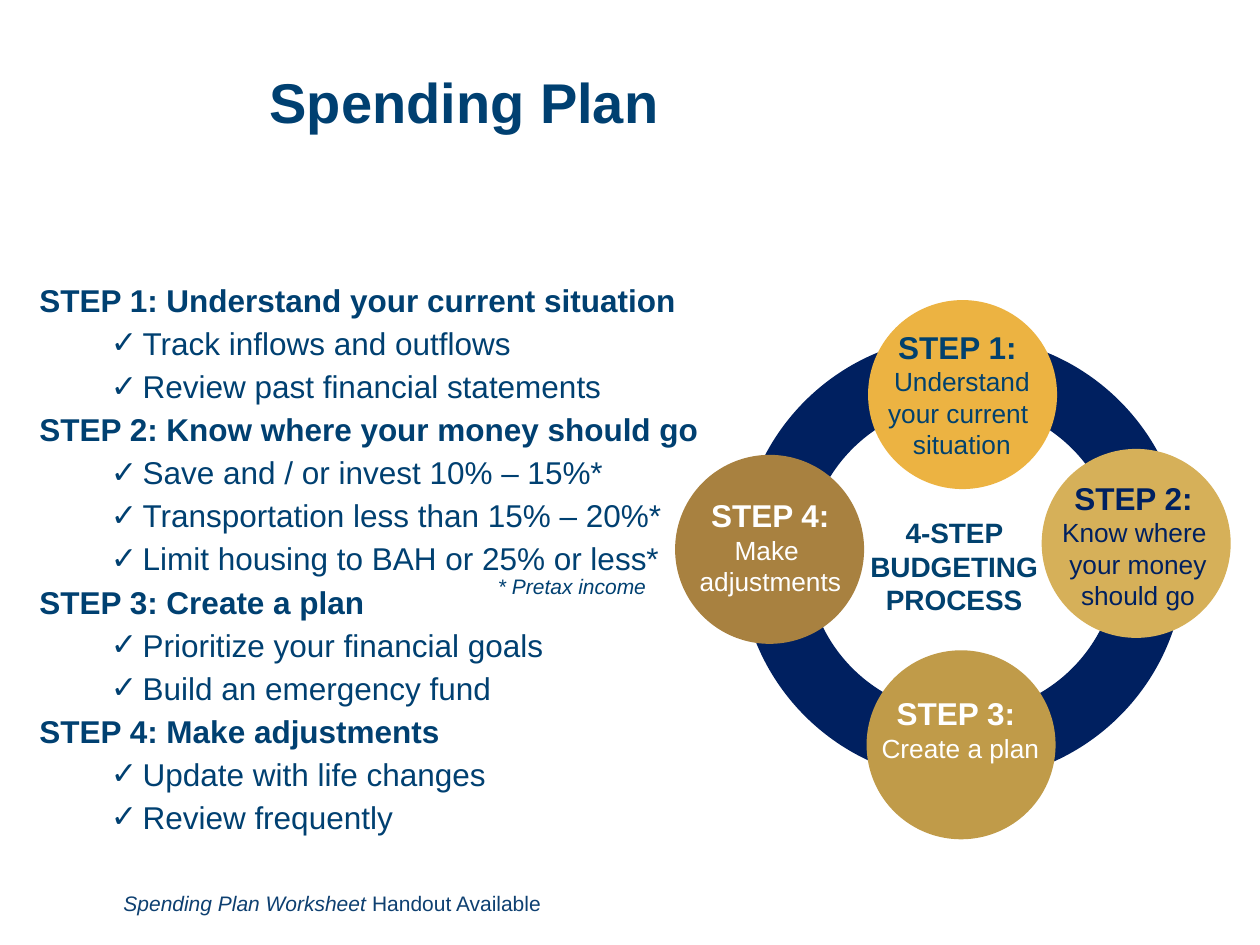
from lxml import etree
from pptx import Presentation
from pptx.dml.color import RGBColor
from pptx.enum.shapes import MSO_SHAPE
from pptx.enum.text import MSO_ANCHOR, MSO_AUTO_SIZE, PP_ALIGN
from pptx.oxml.ns import qn
from pptx.util import Cm, Pt

OVAL = MSO_SHAPE.OVAL
TOP, MIDDLE = MSO_ANCHOR.TOP, MSO_ANCHOR.MIDDLE
LEFT, CENTER = PP_ALIGN.LEFT, PP_ALIGN.CENTER
FIXED = MSO_AUTO_SIZE.NONE

BLUE = RGBColor(0x00, 0x40, 0x71)
STEEL = RGBColor(0x01, 0x41, 0x6E)
SLATE = RGBColor(0x0E, 0x40, 0x71)
NAVY = RGBColor(0x00, 0x20, 0x60)
WHITE = RGBColor(0xFF, 0xFF, 0xFF)
AMBER = RGBColor(0xEC, 0xB3, 0x42)
SAND = RGBColor(0xD6, 0xB0, 0x59)
GOLD = RGBColor(0xC0, 0x9B, 0x49)
BRONZE = RGBColor(0xA8, 0x81, 0x40)

PLAN = [
    ("STEP 1: Understand your current situation",
     ["Track inflows and outflows", "Review past financial statements"]),
    ("STEP 2: Know where your money should go",
     ["Save and / or invest 10% – 15%*",
      "Transportation less than 15% – 20%*",
      "Limit housing to BAH or 25% or less*"]),
    ("STEP 3: Create a plan",
     ["Prioritize your financial goals", "Build an emergency fund"]),
    ("STEP 4: Make adjustments",
     ["Update with life changes", "Review frequently"]),
]

# Disc place in the wheel, fill, text colour, text place in the disc, lines
DISC = 3.81
STEPS = [
    (3.89, 0, AMBER, STEEL, 0.05, 0.43,
     ["STEP 1: ", "Understand your current ", "situation"]),
    (7.39, 3, SAND, NAVY, 0.1, 0.48,
     ["STEP 2: ", "Know where ", "your money", "should go"]),
    (3.86, 7.06, GOLD, WHITE, 0.05, 0.76,
     ["STEP 3: ", "Create a plan"]),
    (0, 3.12, BRONZE, WHITE, 0.08, 0.71,
     ["STEP 4:", "Make ", "adjustments"]),
]


def place(shape, box):
    shape.left, shape.top, shape.width, shape.height = map(Cm, box)


def add_run(para, text, size, color, bold=False, italic=False):
    run = para.add_run()
    run.text = text
    font = run.font
    font.name, font.size = "Arial", Pt(size)
    font.bold, font.italic = bold, italic
    font.color.rgb = color


def next_para(frame, first):
    return frame.paragraphs[0] if first else frame.add_paragraph()


def add_text(shapes, box):
    """Add a wrapping text box and return its text frame."""
    frame = shapes.add_textbox(*map(Cm, box)).text_frame
    frame.word_wrap = True
    return frame


def set_bullet(para, mark, margin, indent):
    props = para._p.get_or_add_pPr()
    props.set("marL", str(Cm(margin)))
    props.set("indent", str(Cm(indent)))
    if mark:
        etree.SubElement(props, qn("a:buChar")).set("char", mark)
    else:
        etree.SubElement(props, qn("a:buNone"))


def fill_title(title, box):
    place(title, box)
    frame = title.text_frame
    frame.auto_size = FIXED
    frame.vertical_anchor = MIDDLE
    para = frame.paragraphs[0]
    para.alignment = LEFT
    para.line_spacing = 0.9
    add_run(para, "Spending Plan", 32, BLUE, bold=True)


def fill_plan(body, box):
    place(body, box)
    frame = body.text_frame
    frame.auto_size = FIXED
    frame.vertical_anchor = TOP
    rows = []
    for head, items in PLAN:
        rows.append((head, True))
        rows += [(item, False) for item in items]
    for i, (text, head) in enumerate(rows):
        para = next_para(frame, i == 0)
        if head:
            set_bullet(para, None, 0.03, 0)
        else:
            para.level = 1
            set_bullet(para, "✓", 2.11, -0.64)
        para.space_before = Pt(2 if i else 0)
        para.space_after = Pt(1)
        add_run(para, text, 18, BLUE, bold=head)


def add_notes(shapes, left, top):
    """Add the footnote of the list and the handout line below it."""
    para = add_text(shapes, (left + 7.98, top + 5.89, 5.49, 0.89)).paragraphs[0]
    set_bullet(para, None, 1.3, 0)
    add_run(para, "* Pretax income", 12, BLUE, italic=True)
    para = add_text(shapes, (left + 1.73, top + 12.29, 8.92, 0.76)).paragraphs[0]
    add_run(para, "Spending Plan Worksheet", 12, SLATE, italic=True)
    add_run(para, " Handout Available", 12, SLATE)


def add_disc(shapes, x, y, size):
    disc = shapes.add_shape(OVAL, Cm(x), Cm(y), Cm(size), Cm(size))
    disc.shadow.inherit = False
    return disc


def add_label(shapes, box, lines, color):
    """Add centred lines, each given as text, size and bold."""
    frame = add_text(shapes, box)
    for i, (text, size, bold) in enumerate(lines):
        para = next_para(frame, i == 0)
        para.alignment = CENTER
        add_run(para, text, size, color, bold=bold)


def add_wheel(slide, left, top):
    shapes = slide.shapes.add_group_shape().shapes
    ring = add_disc(shapes, left + 1.98, top + 1.4, 7.62)
    ring.fill.background()
    ring.line.color.rgb = NAVY
    ring.line.width = Pt(38.5)
    for x, y, fill, *_ in STEPS:
        disc = add_disc(shapes, left + x, top + y, DISC)
        disc.fill.solid()
        disc.fill.fore_color.rgb = fill
        disc.line.fill.background()
    hub = [("4-STEP BUDGETING", 16, True), ("PROCESS", 16, True)]
    add_label(shapes, (left + 3.3, top + 4.22, 4.65, 2.31), hub, STEEL)
    for x, y, _, color, dx, dy, (head, *rest) in STEPS:
        lines = [(head, 18, True)] + [(text, 15, False) for text in rest]
        box = (left + x + dx, top + y + dy, 3.68, 2.95)
        add_label(shapes, box, lines, color)


def main():
    deck = Presentation()
    deck.slide_width, deck.slide_height = Cm(25.4), Cm(19.05)
    slide = deck.slides.add_slide(deck.slide_layouts[1])
    fill_title(slide.shapes.title, (5.18, 0.28, 18.44, 3.68))
    fill_plan(slide.placeholders[1], (0.51, 5.54, 15.9, 11.1))
    add_notes(slide.shapes, 0.51, 5.54)
    add_wheel(slide, 13.61, 6.05)
    deck.save("out.pptx")


if __name__ == "__main__":
    main()
